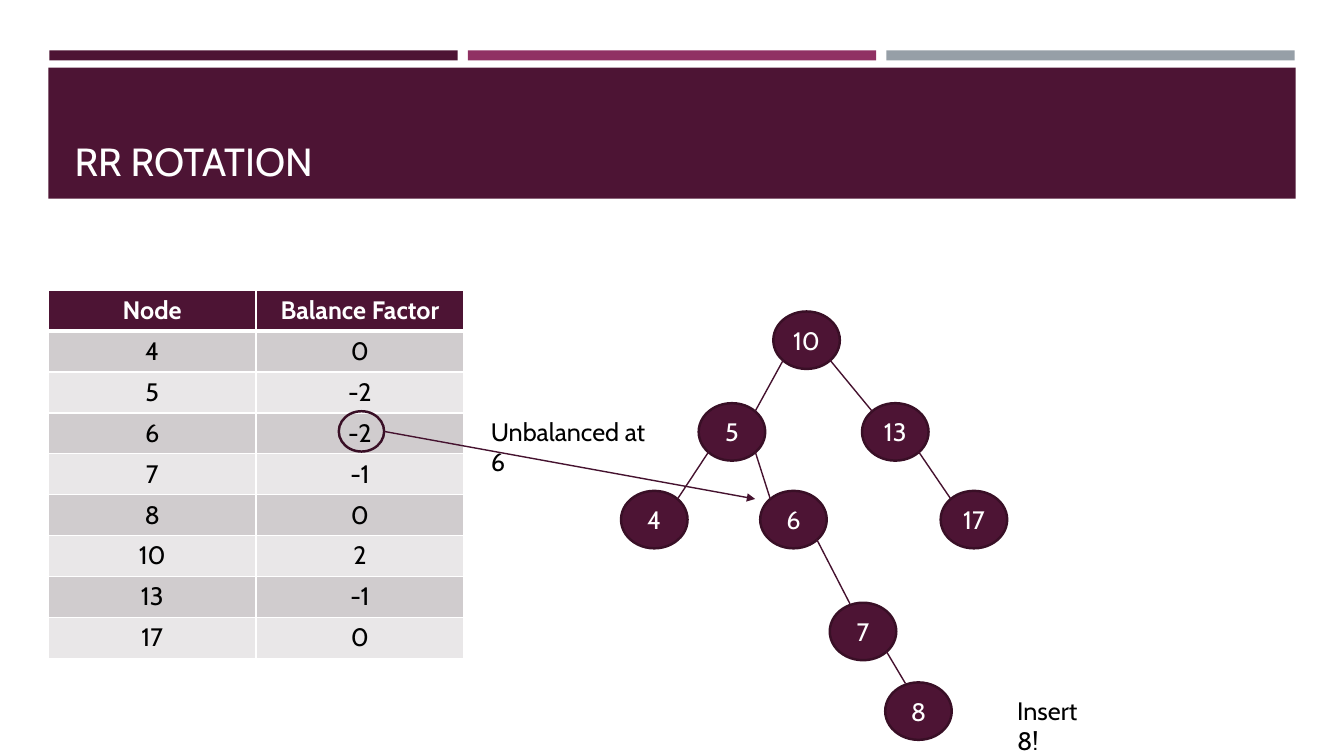
"""Build the RR rotation slide: balance factor table and AVL tree."""
from dataclasses import dataclass
from typing import Optional

from lxml.etree import SubElement
from pptx import Presentation
from pptx.dml.color import RGBColor
from pptx.enum.shapes import MSO_CONNECTOR, MSO_SHAPE
from pptx.enum.text import MSO_ANCHOR, PP_ALIGN
from pptx.oxml import parse_xml
from pptx.oxml.ns import nsdecls, qn
from pptx.util import Pt

PX = 9144
FONT = "Cabin"
PLUM = RGBColor(0x4D, 0x14, 0x34)
MAGENTA = RGBColor(0x90, 0x31, 0x63)
GRAY = RGBColor(0x96, 0x9F, 0xA7)
OUTLINE = RGBColor(0x39, 0x0F, 0x26)
EDGE_COLOR = RGBColor(0x45, 0x12, 0x2F)
BAND_DARK = RGBColor(0xD0, 0xCC, 0xCE)
BAND_LIGHT = RGBColor(0xE9, 0xE7, 0xE8)
WHITE = RGBColor(0xFF, 0xFF, 0xFF)
BLACK = RGBColor(0, 0, 0)
NODE_W, NODE_H = 66, 57
CORNER_X, CORNER_Y = 23, 20


@dataclass(frozen=True)
class Node:
    key: int
    x: int
    y: int

    def corner(self, dx: int, dy: int) -> tuple[int, int]:
        return (self.x + NODE_W // 2 + dx * CORNER_X,
                self.y + NODE_H // 2 + dy * CORNER_Y)


@dataclass(frozen=True)
class Edge:
    parent: int
    child: int
    end: Optional[tuple[int, int]] = None


@dataclass(frozen=True)
class Label:
    text: str
    x: int
    y: int
    w: int


NODES = [Node(10, 767, 309), Node(5, 693, 400), Node(17, 933, 487),
         Node(13, 855, 400), Node(6, 754, 487), Node(7, 823, 598),
         Node(4, 616, 487), Node(8, 878, 677)]
EDGES = [Edge(10, 5), Edge(5, 4), Edge(6, 7, (843, 599)), Edge(5, 6),
         Edge(10, 13), Edge(13, 17), Edge(7, 8, (898, 678))]
LABELS = [Label("Insert 8!", 999, 685, 106),
          Label("Unbalanced at 6", 477, 408, 185)]
ROWS = [("Node", "Balance Factor"), (4, 0), (5, -2), (6, -2), (7, -1),
        (8, 0), (10, 2), (13, -1), (17, 0)]


def set_text(tf, text: str, *, size: int = 18, color: RGBColor = BLACK,
             bold: bool = False, align=PP_ALIGN.LEFT) -> None:
    p = tf.paragraphs[0]
    p.alignment = align
    r = p.add_run()
    r.text = text
    r.font.name, r.font.size, r.font.bold = FONT, Pt(size), bold
    r.font.color.rgb = color


def add_shape(s, kind, x: int, y: int, w: int, h: int,
              fill: Optional[RGBColor] = None, line: Optional[RGBColor] = None):
    sp = s.shapes.add_shape(kind, x * PX, y * PX, w * PX, h * PX)
    sp.shadow.inherit = False
    if fill is None:
        sp.fill.background()
    else:
        sp.fill.solid()
        sp.fill.fore_color.rgb = fill
    if line is None:
        sp.line.fill.background()
    else:
        sp.line.color.rgb = line
        sp.line.width = Pt(1.75)
    return sp


def add_line(s, start: tuple[int, int], end: tuple[int, int],
             arrow: bool = False) -> None:
    cxn = s.shapes.add_connector(MSO_CONNECTOR.STRAIGHT,
                                 *(v * PX for v in start + end))
    cxn.line.color.rgb = EDGE_COLOR
    cxn.line.width = Pt(1)
    if arrow:
        SubElement(cxn.line._get_or_add_ln(), qn("a:tailEnd"), type="triangle")
    SubElement(cxn.element.spPr, qn("a:effectLst"))


def add_node(s, node: Node) -> None:
    sp = add_shape(s, MSO_SHAPE.OVAL, node.x, node.y, NODE_W, NODE_H, PLUM, OUTLINE)
    tf = sp.text_frame
    tf.vertical_anchor = MSO_ANCHOR.MIDDLE
    set_text(tf, str(node.key), color=WHITE, align=PP_ALIGN.CENTER)


def add_edge(s, edge: Edge, nodes: dict[int, Node]) -> None:
    parent, child = nodes[edge.parent], nodes[edge.child]
    side = 1 if child.x > parent.x else -1
    add_line(s, parent.corner(side, 1), edge.end or child.corner(-side, -1))


def add_label(s, label: Label) -> None:
    box = s.shapes.add_textbox(label.x * PX, label.y * PX, label.w * PX, 40 * PX)
    box.text_frame.word_wrap = True
    set_text(box.text_frame, label.text)


def set_borders(cell, row: int) -> None:
    widths = {"L": 1, "R": 1, "T": 3 if row == 1 else 1, "B": 3 if row == 0 else 1}
    tc_pr = cell._tc.get_or_add_tcPr()
    for i, (side, width) in enumerate(widths.items()):
        tc_pr.insert(i, parse_xml(
            f'<a:ln{side} {nsdecls("a")} w="{Pt(width)}"><a:solidFill>'
            f'<a:srgbClr val="{WHITE}"/></a:solidFill></a:ln{side}>'))


def add_balance_table(s) -> None:
    table = s.shapes.add_table(len(ROWS), 2, 48 * PX, 288 * PX,
                               412 * PX, 360 * PX).table
    for i, values in enumerate(ROWS):
        fill = PLUM if i == 0 else BAND_DARK if i % 2 else BAND_LIGHT
        for j, value in enumerate(values):
            cell = table.cell(i, j)
            cell.fill.solid()
            cell.fill.fore_color.rgb = fill
            set_text(cell.text_frame, str(value), bold=i == 0,
                     color=BLACK if i else WHITE, align=PP_ALIGN.CENTER)
            set_borders(cell, i)


def add_header(s) -> None:
    for i, color in enumerate((PLUM, MAGENTA, GRAY)):
        add_shape(s, MSO_SHAPE.RECTANGLE, 49 + i * 415, 50, 405, 10, color)
    band = add_shape(s, MSO_SHAPE.RECTANGLE, 48, 67, 1237, 130, PLUM)
    title = s.shapes.title
    title.left, title.top = 64 * PX, 77 * PX
    title.width, title.height = 1206 * PX, 111 * PX
    title.text_frame.vertical_anchor = MSO_ANCHOR.BOTTOM
    set_text(title.text_frame, "RR ROTATION", size=28, color=WHITE)
    band.element.addnext(title.element)


def main() -> None:
    prs = Presentation()
    prs.slide_width, prs.slide_height = 1333 * PX, 750 * PX
    s = prs.slides.add_slide(prs.slide_layouts[5])
    add_header(s)
    for node in NODES:
        add_node(s, node)
    nodes = {node.key: node for node in NODES}
    for edge in EDGES:
        add_edge(s, edge, nodes)
    add_balance_table(s)
    add_shape(s, MSO_SHAPE.OVAL, 336, 408, 45, 40, line=OUTLINE)
    add_line(s, (381, 428), (749, 495), arrow=True)
    for label in LABELS:
        add_label(s, label)
    prs.save("out.pptx")


if __name__ == "__main__":
    main()
